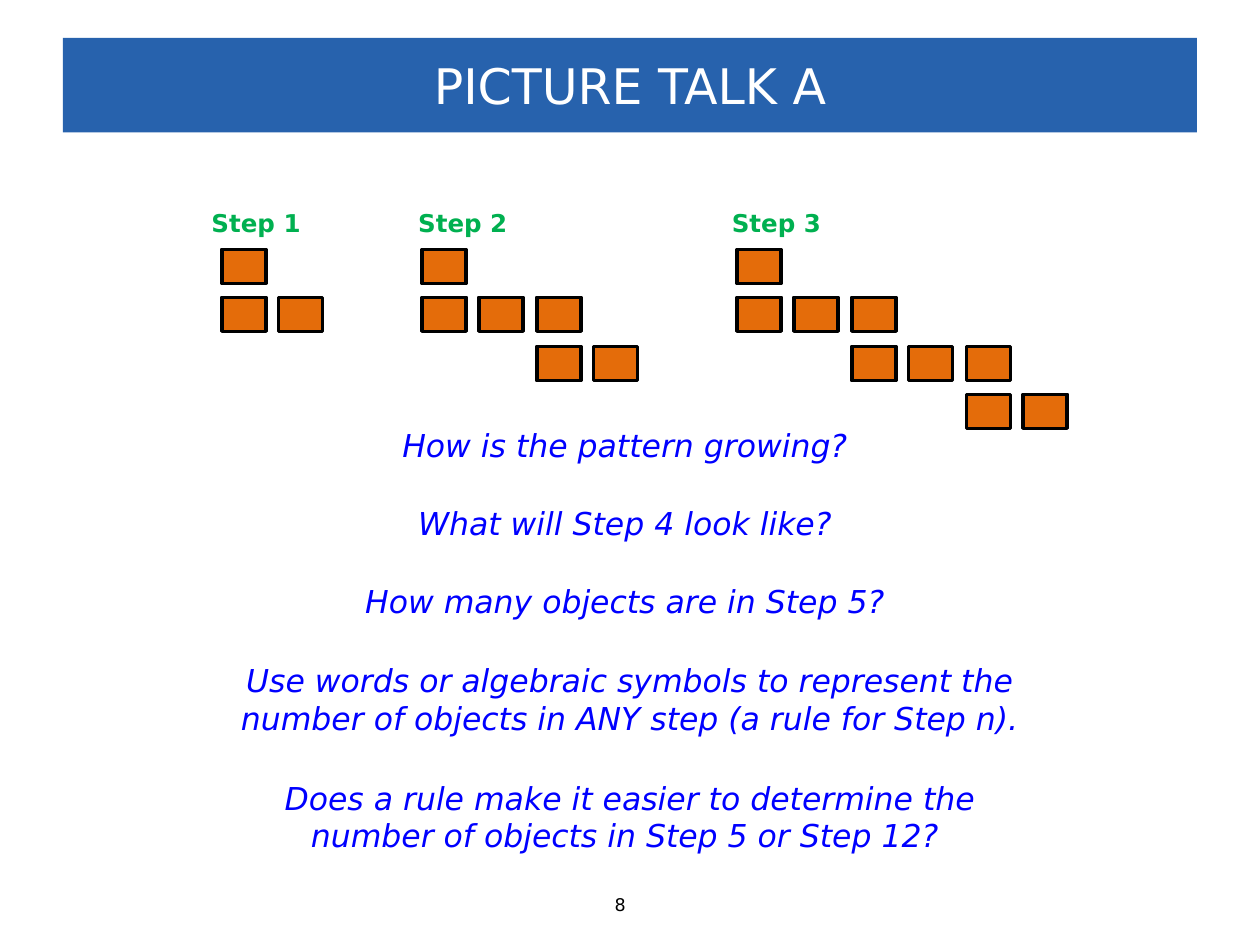
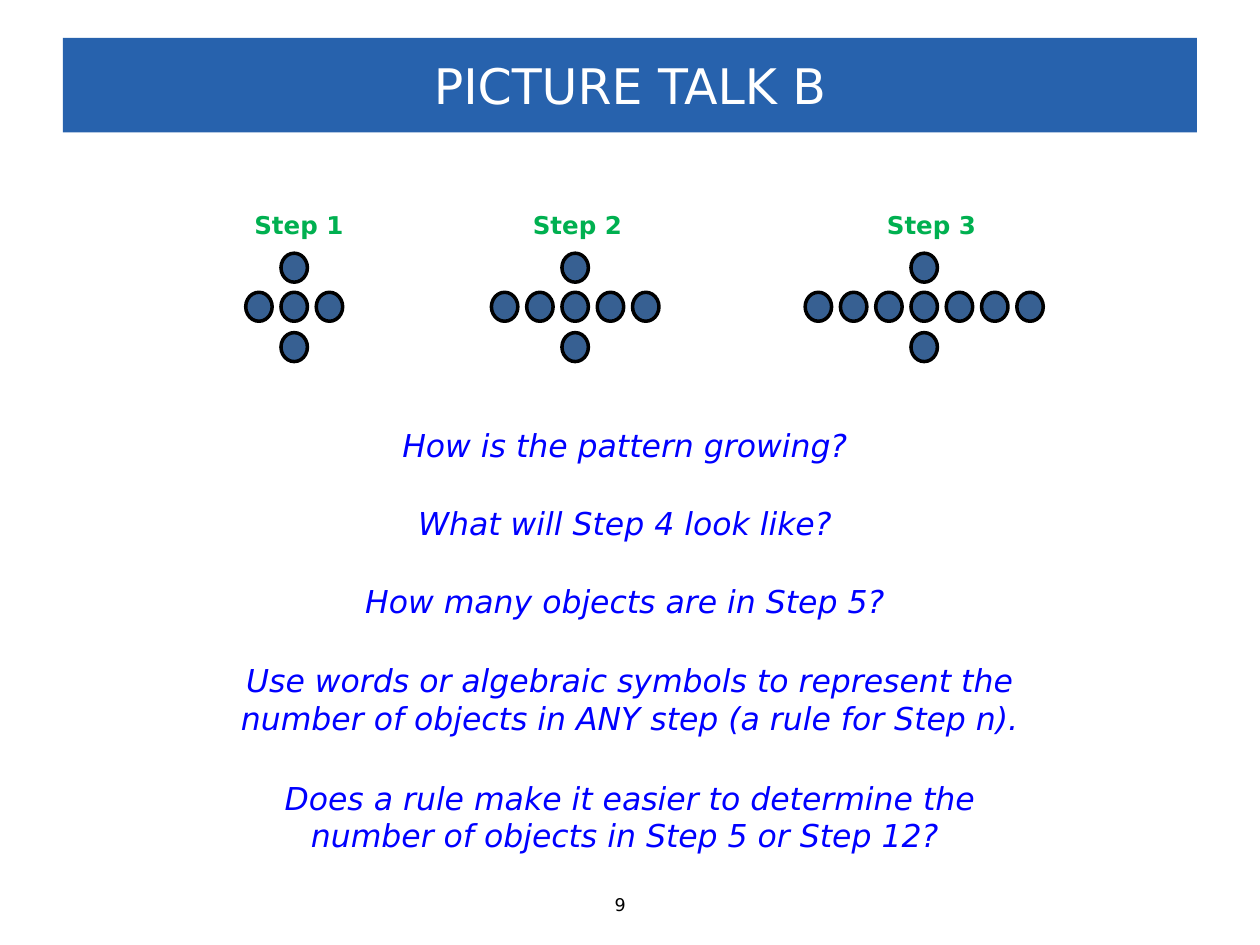
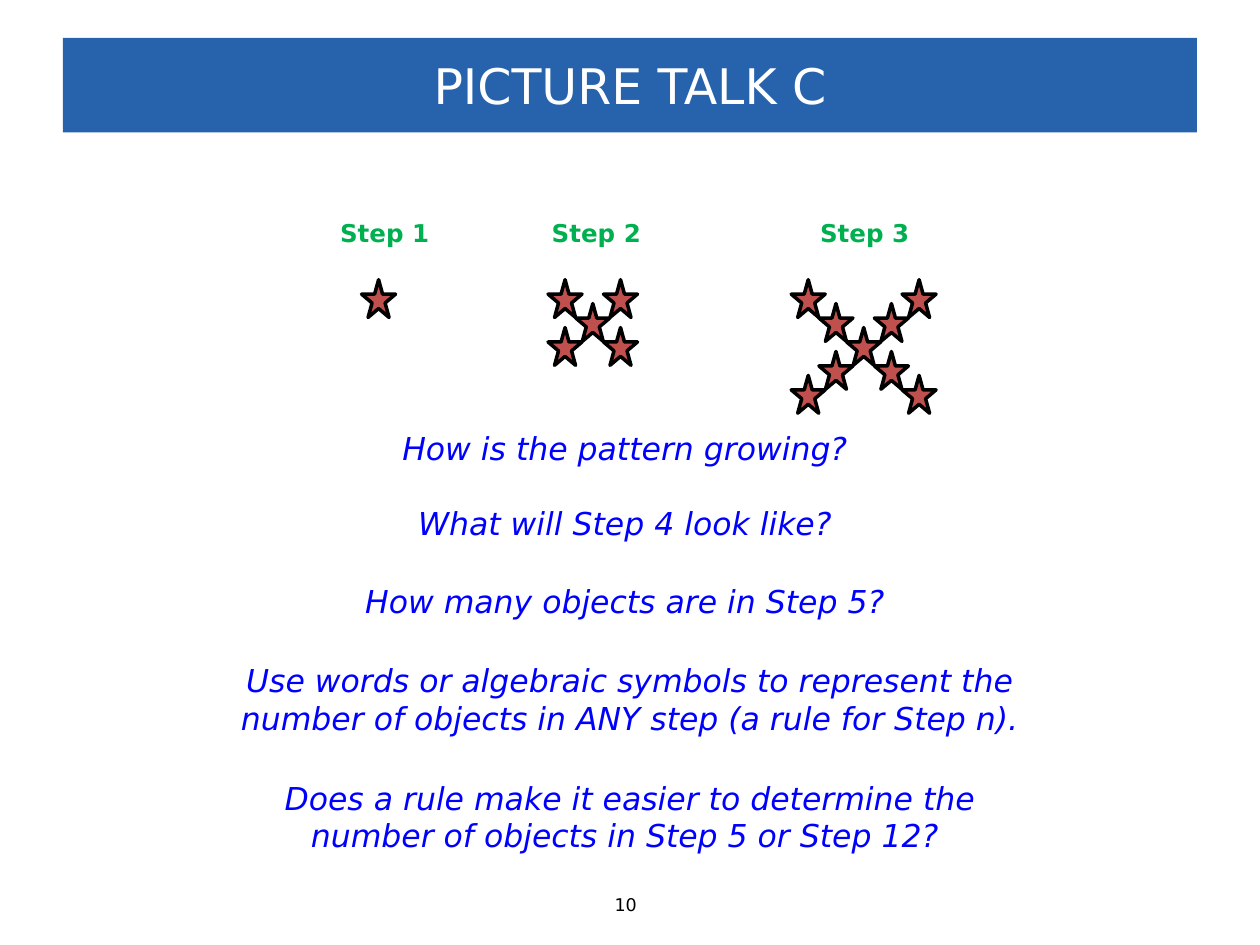
from collections import namedtuple

from pptx import Presentation
from pptx.dml.color import RGBColor
from pptx.enum.shapes import MSO_SHAPE as Shape
from pptx.enum.text import MSO_ANCHOR as Anchor, PP_ALIGN as Align
from pptx.util import Emu, Pt

PX = 9144  # EMU per px, 100 px to the inch
SLIDE_W, SLIDE_H = 1000, 750
FONT = "DejaVu Sans"
BAND_BLUE, BLACK, WHITE = "2762AD", "000000", "FFFFFF"

TITLE = {"size": Pt(28), "color": WHITE}
QUESTION = {"size": Pt(18), "italic": True, "color": "0000FF"}
STEP_LABEL = {"size": Pt(14), "bold": True, "color": "00B050"}
PAGE_NUMBER = {"size": Pt(10), "color": BLACK}

TITLE_BOX = (50, 30, 900, 75)
PAGE_NUMBER_BOX = (478, 705, 44, 27)
LABEL_W, LABEL_H = 105, 34
QUESTIONS_TOP, QUESTION_GAP = 333, 22

# width, height, wording
QUESTIONS = [
    (407, 40, "How is the pattern growing? "),
    (379, 40, "What will Step 4 look like? "),
    (447, 41, "How many objects are in Step 5? "),
    (670, 71, "Use words or algebraic symbols to represent the number of "
              "objects in ANY step (a rule for Step n)."),
    (583, 71, "Does a rule make it easier to determine the number of "
              "objects in Step 5 or Step 12? "),
]

Piece = namedtuple("Piece", "shape fill width height")
Talk = namedtuple("Talk", "letter piece offsets top starts label_top label_lefts first_drop")


def rgb(hex_color):
    return RGBColor.from_string(hex_color)


def px(*lengths):
    return [Emu(round(length * PX)) for length in lengths]


def write(frame, text, style, align=Align.LEFT, anchor=Anchor.TOP):
    frame.word_wrap = True
    frame.vertical_anchor = anchor
    paragraph = frame.paragraphs[0]
    paragraph.alignment = align
    run = paragraph.add_run()
    run.text = text
    run.font.name = FONT
    for key, value in style.items():
        if key == "color":
            run.font.color.rgb = rgb(value)
        else:
            setattr(run.font, key, value)


def add_text(shapes, box, text, style, align=Align.LEFT):
    write(shapes.add_textbox(*px(*box)).text_frame, text, style, align)


def add_filled(shapes, kind, box, fill):
    shape = shapes.add_shape(kind, *px(*box))
    shape.shadow.inherit = False
    shape.fill.solid()
    shape.fill.fore_color.rgb = rgb(fill)
    return shape


def staircase(step):
    """Offsets of a square on top of overlapping rows, each two columns further right."""
    yield 0, 0
    for row in range(1, step + 1):
        for column in range(2 * row - 2, 2 * row + (row < step)):
            yield column * 91 // 2, row * 77 // 2


def cross(step):
    """Offsets of a row with arms of the step's length, and one dot above and below."""
    yield from ((0, 0), (0, 31), (0, 63))
    for distance in range(1, step + 1):
        for side in (-1, 1):
            yield side * distance * 28, 31


def diagonals(step):
    """Offsets of an X that grows by one ring of four with each step."""
    middle = 19 * (step - 1)
    yield 0, middle
    for ring in range(1, step):
        for across, down in ((-1, 1), (1, 1), (1, -1), (-1, -1)):
            yield across * ring * 22, middle + down * ring * 19


TALKS = [
    Talk("A", Piece(Shape.RECTANGLE, "E46C0A", 35, 27), staircase,
         198, (176, 335, 585), 160, (158, 322, 571), 0),
    Talk("B", Piece(Shape.OVAL, "376092", 21, 23), cross,
         201, (223, 446, 723), 162, (192, 413, 694), 0),
    Talk("C", Piece(Shape.STAR_5_POINT, "C0504D", 27, 30), diagonals,
         222, (287, 457, 672), 168, (260, 428, 641), 3),
]


def add_title_band(slide, title):
    band = add_filled(slide.shapes, Shape.RECTANGLE, TITLE_BOX, BAND_BLUE)
    band.line.fill.background()
    write(band.text_frame, title, TITLE, Align.CENTER, Anchor.MIDDLE)


def add_questions(slide, first_drop):
    """Stacks the centred questions; first_drop lowers only the first."""
    top = QUESTIONS_TOP
    for index, (width, height, question) in enumerate(QUESTIONS):
        drop = 0 if index else first_drop
        box = ((SLIDE_W - width) / 2, top + drop, width, height)
        add_text(slide.shapes, box, question, QUESTION, Align.CENTER)
        top += height + QUESTION_GAP


def add_step(slide, talk, step):
    parts = slide.shapes.add_group_shape().shapes
    piece, start = talk.piece, talk.starts[step - 1]
    for across, down in talk.offsets(step):
        box = (start + across, talk.top + down, piece.width, piece.height)
        figure = add_filled(parts, piece.shape, box, piece.fill)
        figure.line.color.rgb = rgb(BLACK)
        figure.line.width = Pt(2)
    label_box = (talk.label_lefts[step - 1], talk.label_top, LABEL_W, LABEL_H)
    add_text(parts, label_box, f"Step {step}", STEP_LABEL)


def add_talk_slide(deck, talk, number):
    slide = deck.slides.add_slide(deck.slide_layouts[6])
    add_text(slide.shapes, PAGE_NUMBER_BOX, str(number), PAGE_NUMBER)
    add_title_band(slide, f"PICTURE TALK {talk.letter}")
    add_questions(slide, talk.first_drop)
    for step in range(1, len(talk.starts) + 1):
        add_step(slide, talk, step)


def main():
    deck = Presentation()
    deck.slide_width, deck.slide_height = px(SLIDE_W, SLIDE_H)
    for number, talk in enumerate(TALKS, start=8):
        add_talk_slide(deck, talk, number)
    deck.save("out.pptx")


if __name__ == "__main__":
    main()
